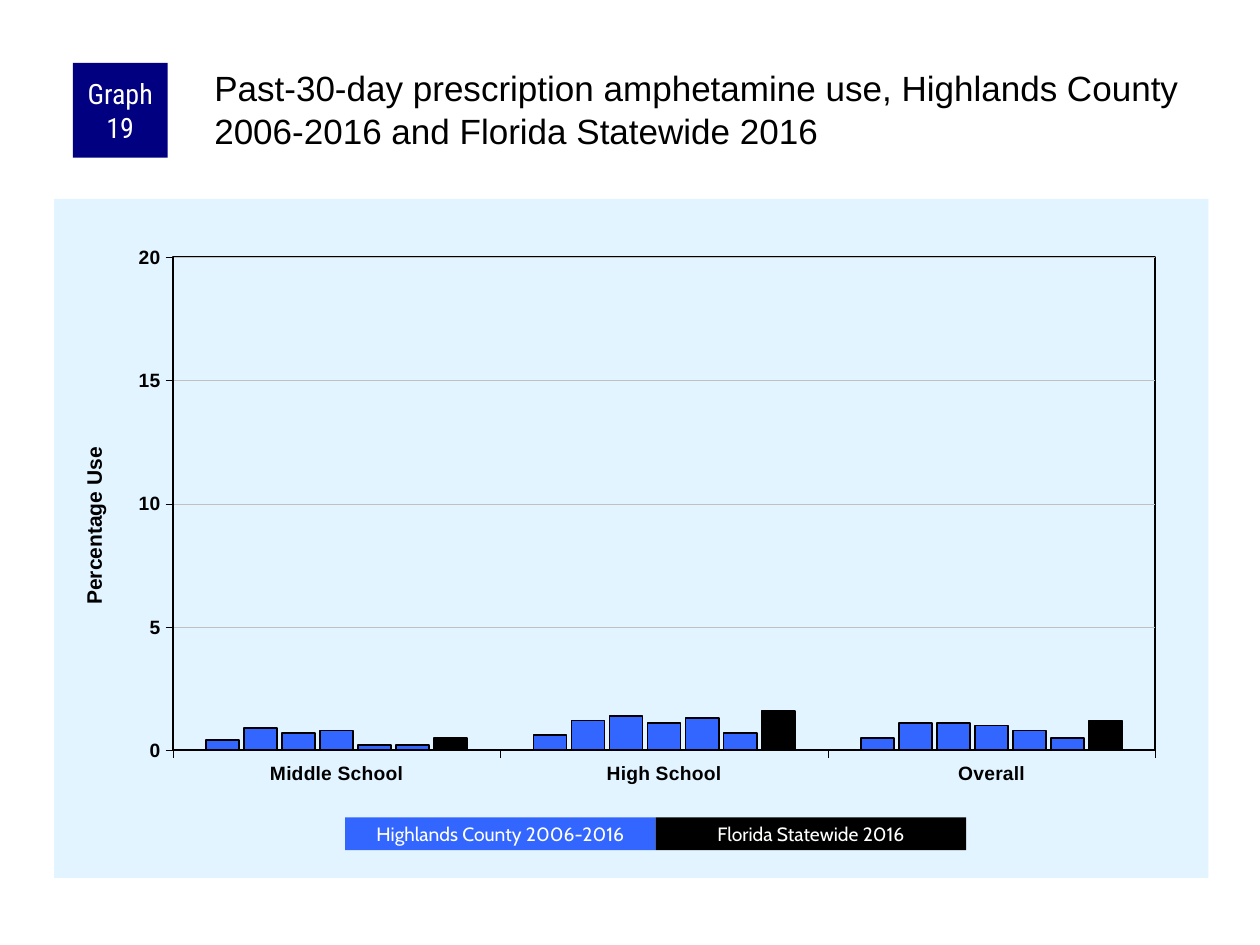
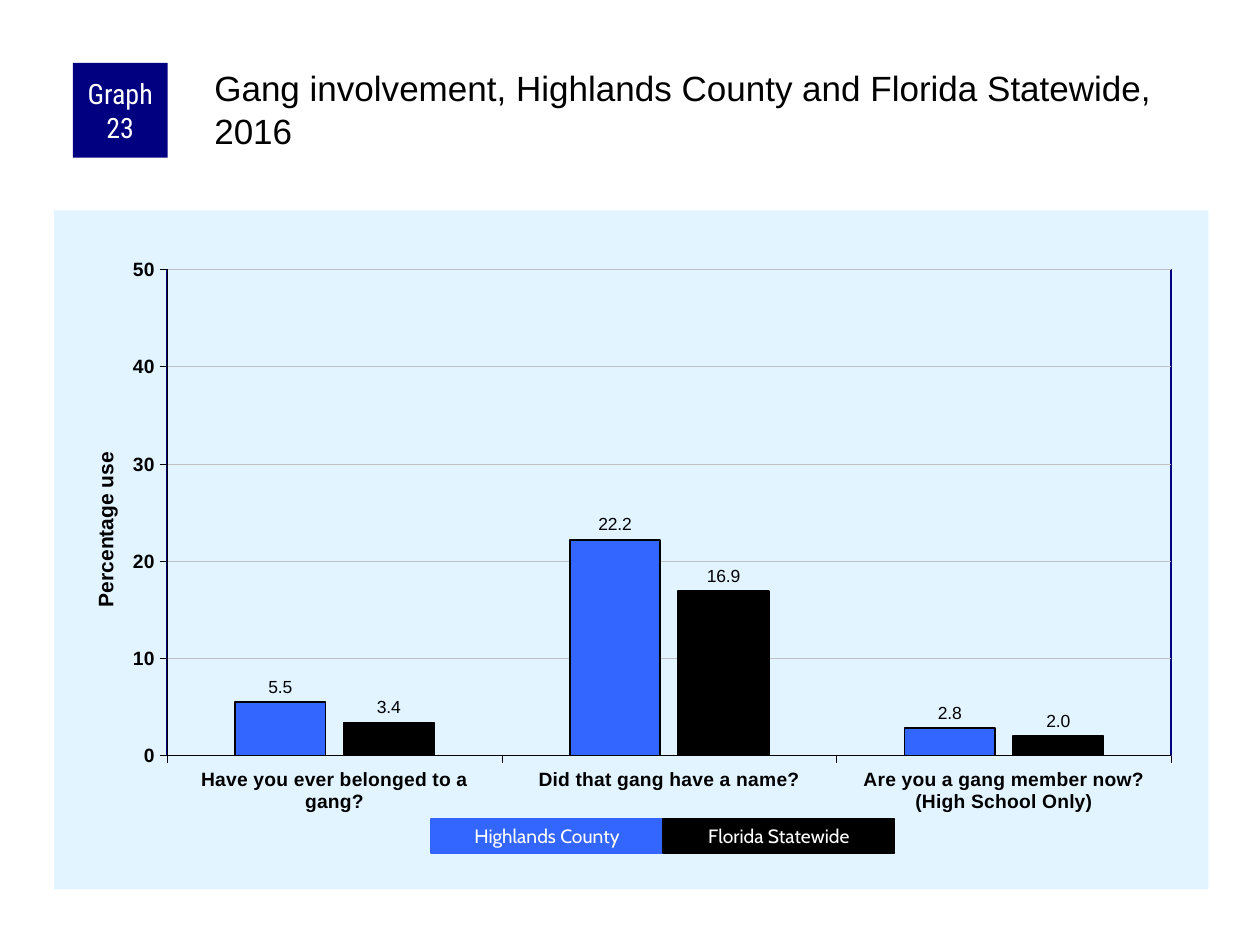
from dataclasses import dataclass

import lxml.etree
import pptx
import pptx.chart.data
import pptx.dml.color
import pptx.enum.chart
import pptx.enum.shapes
import pptx.enum.text
import pptx.oxml
import pptx.oxml.ns
import pptx.util

Cm = pptx.util.Cm
Pt = pptx.util.Pt
RGBColor = pptx.dml.color.RGBColor
qn = pptx.oxml.ns.qn

WHITE = RGBColor(0xFF, 0xFF, 0xFF)
BLACK = RGBColor(0x00, 0x00, 0x00)
NAVY = RGBColor(0x00, 0x00, 0x80)
BLUE = RGBColor(0x33, 0x66, 0xFF)
PALE_BLUE = RGBColor(0xE1, 0xF4, 0xFF)
GRID_GREY = RGBColor(0xC0, 0xC0, 0xC0)

BODY_FONT = "Arial"
BADGE_FONT = "Roboto Condensed"
LEGEND_FONT = "Cabin"


@dataclass
class Box:
    left: float
    top: float
    width: float
    height: float

    def inner(self, left, top, width, height):
        return Box(self.left + left, self.top + top, width, height)

    def lengths(self):
        return [Cm(n) for n in (self.left, self.top, self.width, self.height)]


@dataclass
class Graph:
    number: int
    title: str
    box: Box
    categories: list
    series: list
    axis_title: str
    title_position: tuple
    maximum: int
    step: int
    gap: int
    overlap: int
    plot: tuple
    frame: RGBColor
    legend: Box
    legend_names: tuple
    legend_border: float = 0
    show_values: bool = False


HEADER_BOX = Box(1.47, 1.27, 22.89, 2.11)


def style_font(font, name, size, color, bold=False):
    font.name = name
    font.size = Pt(size)
    font.color.rgb = color
    font.bold = bold


def style_line(line, color, width):
    line.color.rgb = color
    line.width = Pt(width)


def add_label_box(slide, box, fill, text, font, size, border=0):
    shape = slide.shapes.add_shape(pptx.enum.shapes.MSO_SHAPE.RECTANGLE, *box.lengths())
    shape.shadow.inherit = False
    shape.fill.solid()
    shape.fill.fore_color.rgb = fill
    if border:
        style_line(shape.line, fill, border)
    else:
        shape.line.fill.background()
    frame = shape.text_frame
    frame.word_wrap = True
    frame.vertical_anchor = pptx.enum.text.MSO_ANCHOR.MIDDLE
    frame.margin_left = frame.margin_right = Cm(0.13)
    frame.margin_top = frame.margin_bottom = 0
    paragraph = frame.paragraphs[0]
    paragraph.alignment = pptx.enum.text.PP_ALIGN.CENTER
    run = paragraph.add_run()
    run.text = text
    style_font(run.font, font, size, WHITE)


def add_header(slide, box, number, text):
    badge = box.inner(0, 0, 1.91, 1.91)
    add_label_box(slide, badge, NAVY, f"Graph {number}", BADGE_FONT, 16)
    title = slide.shapes.title
    title_box = box.inner(2.77, 0, box.width - 2.77, box.height)
    title.left, title.top, title.width, title.height = title_box.lengths()
    frame = title.text_frame
    frame.word_wrap = True
    frame.auto_size = pptx.enum.text.MSO_AUTO_SIZE.NONE
    frame.vertical_anchor = pptx.enum.text.MSO_ANCHOR.TOP
    frame.margin_left = frame.margin_top = Cm(0.08)
    frame.margin_right = frame.margin_bottom = 0
    paragraph = frame.paragraphs[0]
    paragraph.alignment = pptx.enum.text.PP_ALIGN.LEFT
    run = paragraph.add_run()
    run.text = text
    style_font(run.font, BODY_FONT, 20, BLACK)


def set_layout(parent, index, target=None, **fractions):
    for layout in parent.findall(qn("c:layout")):
        parent.remove(layout)
    layout = lxml.etree.Element(qn("c:layout"))
    manual = lxml.etree.SubElement(layout, qn("c:manualLayout"))
    settings = {"layoutTarget": target} if target else {}
    settings.update(xMode="edge", yMode="edge", **fractions)
    for name, value in settings.items():
        lxml.etree.SubElement(manual, qn(f"c:{name}")).set("val", str(value))
    parent.insert(index, layout)


def area_format(fill=None, line=None):
    fill_xml = f'<a:solidFill><a:srgbClr val="{fill}"/></a:solidFill>' if fill else "<a:noFill/>"
    line_xml = (
        f'<a:ln w="{Pt(1)}"><a:solidFill><a:srgbClr val="{line}"/></a:solidFill></a:ln>'
        if line
        else "<a:ln><a:noFill/></a:ln>"
    )
    return pptx.oxml.parse_xml(
        f'<c:spPr {pptx.oxml.ns.nsdecls("c", "a")}>{fill_xml}{line_xml}</c:spPr>'
    )


def style_axes(chart, graph):
    for axis in (chart.category_axis, chart.value_axis):
        axis.major_tick_mark = pptx.enum.chart.XL_TICK_MARK.OUTSIDE
        axis.minor_tick_mark = pptx.enum.chart.XL_TICK_MARK.NONE
        style_font(axis.tick_labels.font, BODY_FONT, 11, BLACK, True)
        style_line(axis.format.line, BLACK, 0.25)
    axis = chart.value_axis
    axis.minimum_scale = 0
    axis.maximum_scale = graph.maximum
    axis.major_unit = graph.step
    style_line(axis.major_gridlines.format.line, GRID_GREY, 0.25)
    run = axis.axis_title.text_frame.paragraphs[0].add_run()
    run.text = graph.axis_title
    style_font(run.font, BODY_FONT, 12, BLACK, True)
    title = axis.axis_title._element
    title.find(".//" + qn("a:bodyPr")).set("rot", "-5400000")
    x, y = graph.title_position
    set_layout(title, 1, x=x, y=y)


def style_series(plot, graph):
    plot.vary_by_categories = False
    plot.gap_width = graph.gap
    plot.overlap = graph.overlap
    *county_series, state_series = plot.series
    for series in plot.series:
        series.format.fill.solid()
        series.format.fill.fore_color.rgb = BLUE
        style_line(series.format.line, BLACK, 1)
        series.invert_if_negative = False
        if graph.show_values:
            labels = series.data_labels
            labels.show_value = True
            labels.number_format = "0.0"
            labels.number_format_is_linked = False
            labels.position = pptx.enum.chart.XL_LABEL_POSITION.OUTSIDE_END
            style_font(labels.font, BODY_FONT, 10, BLACK)
    state_series.format.fill.fore_color.rgb = BLACK


def add_column_chart(slide, box, graph):
    data = pptx.chart.data.CategoryChartData()
    data.categories = graph.categories
    for number, values in enumerate(graph.series, 1):
        data.add_series(f"Series {number}", values)
    chart = slide.shapes.add_chart(
        pptx.enum.chart.XL_CHART_TYPE.COLUMN_CLUSTERED, *box.lengths(), data
    ).chart
    chart.has_legend = False
    chart.has_title = False
    style_font(chart.font, BODY_FONT, 11, BLACK)
    style_axes(chart, graph)
    style_series(chart.plots[0], graph)
    chart_element = chart._chartSpace.find(qn("c:chart"))
    chart_element.addnext(area_format(fill=PALE_BLUE))
    plot_area = chart_element.find(qn("c:plotArea"))
    set_layout(plot_area, 0, "inner", **dict(zip("xywh", graph.plot)))
    plot_area.append(area_format(line=graph.frame))


def add_legend(slide, box, names, border):
    width = box.width / len(names)
    for index, (name, fill) in enumerate(zip(names, (BLUE, BLACK))):
        swatch = box.inner(index * width, 0, width, box.height)
        add_label_box(slide, swatch, fill, name, LEGEND_FONT, 11, border)


def add_graph_slide(presentation, graph):
    slide = presentation.slides.add_slide(presentation.slide_layouts[5])
    box = graph.box
    add_column_chart(slide, box, graph)
    add_header(slide, HEADER_BOX, graph.number, graph.title)
    legend = graph.legend
    legend_box = box.inner(legend.left, legend.top, legend.width, legend.height)
    add_legend(slide, legend_box, graph.legend_names, graph.legend_border)


GRAPHS = [
    Graph(
        number=19,
        title="Past-30-day prescription amphetamine use, Highlands County "
        "2006-2016 and Florida Statewide 2016",
        box=Box(1.09, 4.01, 23.27, 13.69),
        categories=["Middle School", "High School", "Overall"],
        series=[
            (0.4, 0.6, 0.5),
            (0.9, 1.2, 1.1),
            (0.7, 1.4, 1.1),
            (0.8, 1.1, 1),
            (0.2, 1.3, 0.8),
            (0.2, 0.7, 0.5),
            (0.5, 1.6, 1.2),
        ],
        axis_title="Percentage Use",
        title_position=(0.02, 0.36),
        maximum=20,
        step=5,
        gap=200,
        overlap=-15,
        plot=(0.103, 0.086, 0.851, 0.726),
        frame=BLACK,
        legend=Box(5.87, 12.47, 12.52, 0.66),
        legend_names=("Highlands County 2006-2016", "Florida Statewide 2016"),
    ),
    Graph(
        number=23,
        title="Gang involvement, Highlands County and Florida Statewide, 2016",
        box=Box(1.09, 4.24, 23.27, 13.69),
        categories=[
            "Have you ever belonged to a gang?",
            "Did that gang have a name?",
            "Are you a gang member now?\n(High School Only)",
        ],
        series=[(5.5, 22.2, 2.8), (3.4, 16.9, 2)],
        axis_title="Percentage use",
        title_position=(0.03, 0.35),
        maximum=50,
        step=10,
        gap=150,
        overlap=-20,
        plot=(0.098, 0.087, 0.87, 0.716),
        frame=NAVY,
        legend=Box(7.6, 12.27, 9.35, 0.69),
        legend_names=("Highlands County", "Florida Statewide"),
        legend_border=0.75,
        show_values=True,
    ),
]


def main():
    presentation = pptx.Presentation()
    presentation.slide_width = Cm(25.4)
    presentation.slide_height = Cm(19.05)
    for graph in GRAPHS:
        add_graph_slide(presentation, graph)
    presentation.save("out.pptx")


if __name__ == "__main__":
    main()
